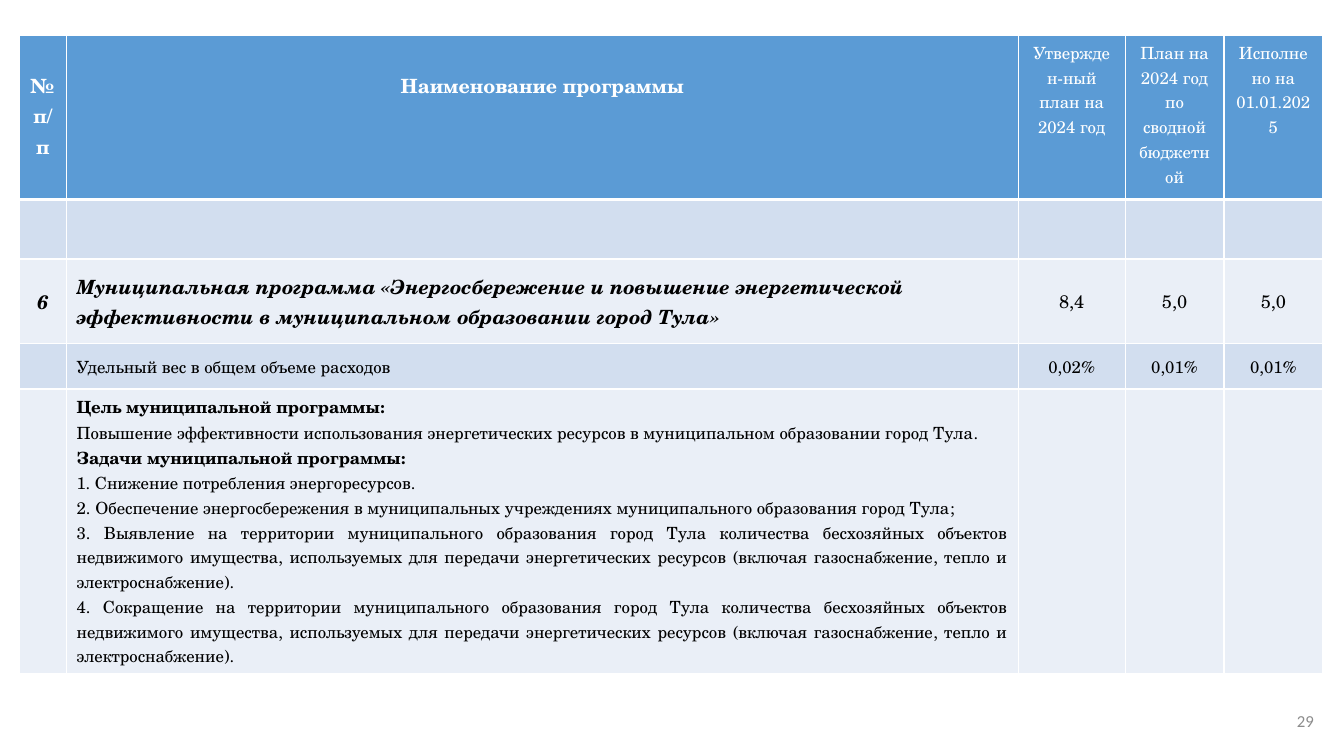
from dataclasses import dataclass

from lxml import etree
from pptx import Presentation
from pptx.dml.color import RGBColor
from pptx.enum.text import MSO_ANCHOR, PP_ALIGN
from pptx.oxml.ns import qn
from pptx.util import Inches, Pt

LEFT, CENTER, RIGHT, JUSTIFY = PP_ALIGN.LEFT, PP_ALIGN.CENTER, PP_ALIGN.RIGHT, PP_ALIGN.JUSTIFY
TOP, MIDDLE = MSO_ANCHOR.TOP, MSO_ANCHOR.MIDDLE


@dataclass(frozen=True)
class Theme:
    font: str = "TeX Gyre Schola"
    number_font: str = "Calibri"
    header: str = "5B9BD5"
    dark_band: str = "D2DEEF"
    light_band: str = "EAEFF7"
    white: str = "FFFFFF"
    black: str = "000000"
    gray: str = "8C8C8C"
    heading: int = 14
    value: int = 13
    body: int = 12


THEME = Theme()

COLUMN_WIDTHS = [0.47, 9.44, 1.06, 0.98, 0.98]
ROW_HEIGHTS = [1.63, 0.59, 0.84, 0.45, 2.82]
HEADINGS = ["№ п/п", "Наименование программы"]
PERIODS = ["Утвержден-ный план на 2024 год",
           "План на 2024 год по сводной бюджетной",
           "Исполнено на 01.01.2025"]
PROGRAM = ("Муниципальная программа «Энергосбережение и повышение энергетической "
           "эффективности в муниципальном образовании город Тула»")
AMOUNTS = ["8,4", "5,0", "5,0"]
SHARES = ["0,02%", "0,01%", "0,01%"]
OBJECTS = ("на территории муниципального образования город Тула количества бесхозяйных "
           "объектов недвижимого имущества, используемых для передачи энергетических "
           "ресурсов (включая газоснабжение, тепло и электроснабжение).")
GOALS = [
    ("Цель муниципальной программы:", True),
    ("Повышение эффективности использования энергетических ресурсов "
     "в муниципальном образовании город Тула.", False),
    ("Задачи муниципальной программы:", True),
    ("1. Снижение потребления энергоресурсов.", False),
    ("2. Обеспечение энергосбережения в муниципальных учреждениях "
     "муниципального образования город Тула;", False),
    (f"3. Выявление {OBJECTS}", False),
    (f"4. Сокращение {OBJECTS}", False),
]


def write_text(paragraph, text, size=THEME.body, color=THEME.black, font=THEME.font,
               bold=False, italic=False, align=CENTER):
    paragraph.alignment = align
    run = paragraph.add_run()
    run.text = text
    run.font.name = font
    run.font.size = Pt(size)
    run.font.bold = bold
    run.font.italic = italic
    run.font.color.rgb = RGBColor.from_string(color)


def write_cell(cell, text, anchor=MIDDLE, **text_format):
    cell.vertical_anchor = anchor
    write_text(cell.text_frame.paragraphs[0], text, **text_format)


def style_cell(cell, fill, top=1, bottom=1):
    properties = cell._tc.get_or_add_tcPr()
    for side, width in (("L", 1), ("R", 1), ("T", top), ("B", bottom)):
        line = etree.SubElement(properties, qn(f"a:ln{side}"), w=str(Pt(width)))
        line_fill = etree.SubElement(line, qn("a:solidFill"))
        etree.SubElement(line_fill, qn("a:srgbClr"), val=THEME.white)
    cell.fill.solid()
    cell.fill.fore_color.rgb = RGBColor.from_string(fill)


def fill_header(table):
    for column, text in enumerate(HEADINGS):
        cell = table.cell(0, column)
        cell.margin_top = Inches(0.35)
        write_cell(cell, text, TOP, size=THEME.heading, color=THEME.white, bold=True)
    for column, text in enumerate(PERIODS, start=len(HEADINGS)):
        write_cell(table.cell(0, column), text, TOP, color=THEME.white)


def fill_program(table):
    # Program name, amounts and shares
    name_format = {"size": THEME.heading, "bold": True, "italic": True}
    write_cell(table.cell(2, 0), "6", **name_format)
    write_cell(table.cell(2, 1), PROGRAM, align=LEFT, **name_format)
    write_cell(table.cell(3, 1), "Удельный вес в общем объеме расходов", align=JUSTIFY)
    for row, values, size in ((2, AMOUNTS, THEME.value), (3, SHARES, THEME.body)):
        for column, value in enumerate(values, start=2):
            write_cell(table.cell(row, column), value, size=size)

    # Goal and tasks
    cell = table.cell(4, 1)
    cell.vertical_anchor = MIDDLE
    frame = cell.text_frame
    for index, (text, bold) in enumerate(GOALS):
        paragraph = frame.add_paragraph() if index else frame.paragraphs[0]
        write_text(paragraph, text, bold=bold, align=JUSTIFY)


def add_program_table(slide, left, top, width, height):
    shape = slide.shapes.add_table(len(ROW_HEIGHTS), len(COLUMN_WIDTHS),
                                   Inches(left), Inches(top), Inches(width), Inches(height))
    table = shape.table
    for column, column_width in zip(table.columns, COLUMN_WIDTHS):
        column.width = Inches(column_width)
    for index, row_height in enumerate(ROW_HEIGHTS):
        table.rows[index].height = Inches(row_height)
        band = THEME.dark_band if index % 2 else THEME.light_band
        for cell in table.rows[index].cells:
            style_cell(cell, band if index else THEME.header,
                       top=3 if index == 1 else 1, bottom=1 if index else 3)
    fill_header(table)
    fill_program(table)


def add_page_number(slide, left, top, width, height):
    box = slide.shapes.add_textbox(Inches(left), Inches(top), Inches(width), Inches(height))
    frame = box.text_frame
    frame.word_wrap = True
    frame.vertical_anchor = MIDDLE
    write_text(frame.paragraphs[0], "29", color=THEME.gray, font=THEME.number_font, align=RIGHT)


def main():
    presentation = Presentation()
    presentation.slide_width = Inches(13.33)
    presentation.slide_height = Inches(7.5)
    slide = presentation.slides.add_slide(presentation.slide_layouts[6])
    add_program_table(slide, 0.19, 0.35, sum(COLUMN_WIDTHS), sum(ROW_HEIGHTS))
    add_page_number(slide, 9.42, 6.95, 3.71, 0.4)
    presentation.save("out.pptx")


if __name__ == "__main__":
    main()
